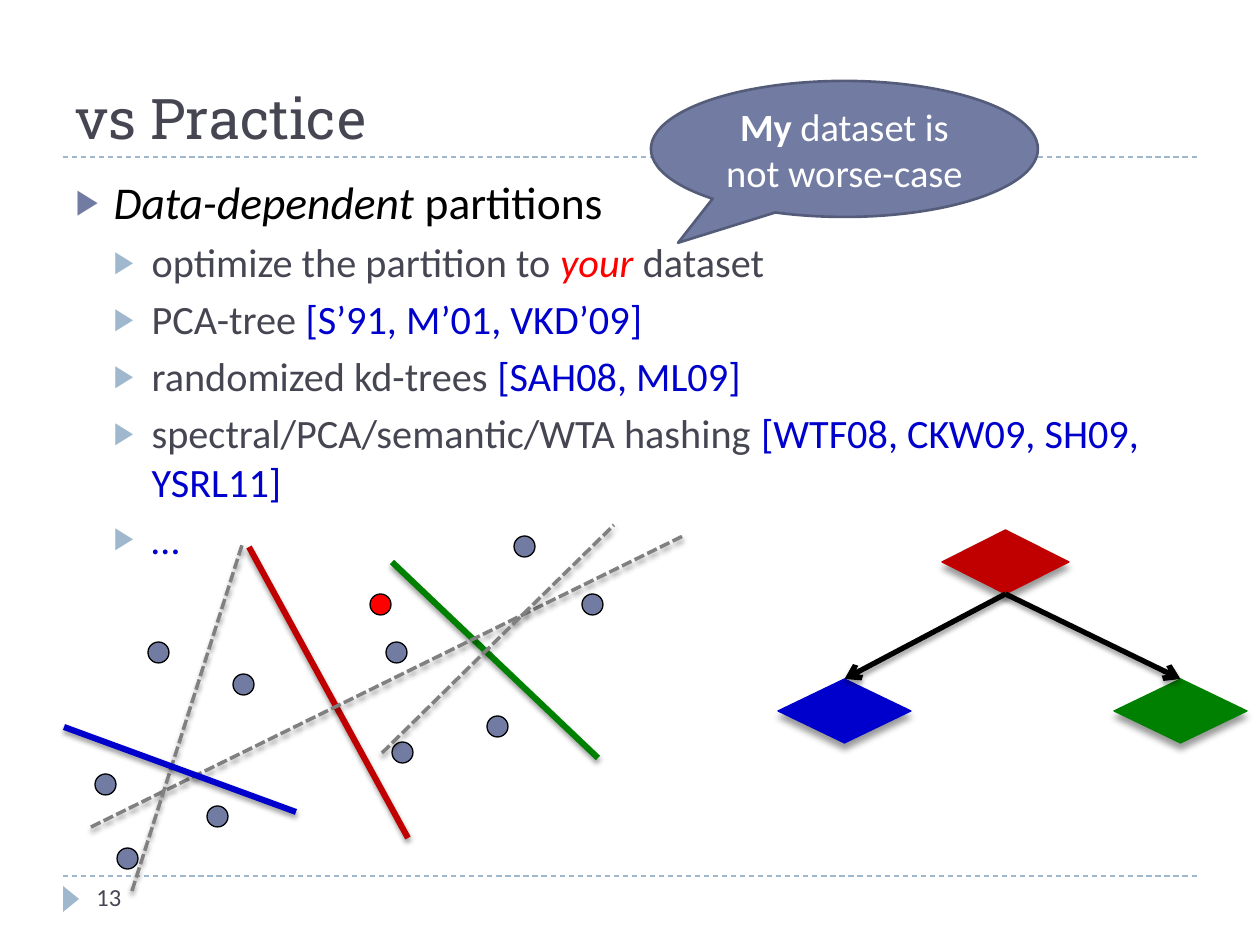
"""Build the slide on data-dependent partitions in practice."""
from lxml.etree import SubElement
from pptx import Presentation
from pptx.dml.color import RGBColor
from pptx.enum.dml import MSO_LINE
from pptx.enum.shapes import MSO_CONNECTOR, MSO_SHAPE
from pptx.enum.text import MSO_ANCHOR, MSO_AUTO_SIZE, PP_ALIGN
from pptx.oxml.ns import qn
from pptx.util import Pt

SCALE = 914400 / 126
BLACK = RGBColor(0x00, 0x00, 0x00)
WHITE = RGBColor(0xFF, 0xFF, 0xFF)
SLATE = RGBColor(0x46, 0x46, 0x53)
INDIGO = RGBColor(0x72, 0x7C, 0xA3)
DARK_INDIGO = RGBColor(0x54, 0x5C, 0x79)
PALE_BLUE = RGBColor(0x9F, 0xB8, 0xCD)
BRIGHT_RED = RGBColor(0xFF, 0x00, 0x00)
RED = RGBColor(0xC0, 0x00, 0x00)
GREEN = RGBColor(0x00, 0x80, 0x00)
BLUE = RGBColor(0x00, 0x00, 0xCC)
GRAY = RGBColor(0x80, 0x80, 0x80)


def px(*lengths):
    return [round(length * SCALE) for length in lengths]


def set_shadow(part, blur=0, distance=0):
    effects = SubElement(part.element.spPr, qn("a:effectLst"))
    if blur:
        outer = SubElement(effects, qn("a:outerShdw"), blurRad=str(Pt(blur)),
                           dist=str(Pt(distance)), dir="5400000", rotWithShape="0")
        tint = SubElement(outer, qn("a:srgbClr"), val=str(BLACK))
        SubElement(tint, qn("a:alpha"), val="40000")


presentation = Presentation()
presentation.slide_width, presentation.slide_height = px(1260, 945)
slide = presentation.slides.add_slide(presentation.slide_layouts[1])
shapes = slide.shapes

for rule_y in (876, 157):
    rule = shapes.add_connector(MSO_CONNECTOR.STRAIGHT, *px(63, rule_y, 1197, rule_y))
    rule.line.color.rgb = PALE_BLUE
    rule.line.width = Pt(0.75)
    rule.line.dash_style = MSO_LINE.DASH
    set_shadow(rule)

page_marker = shapes.add_shape(MSO_SHAPE.ISOSCELES_TRIANGLE, *px(58, 891, 26, 16))
page_marker.rotation = 90
page_marker.fill.solid()
page_marker.fill.fore_color.rgb = PALE_BLUE
page_marker.line.fill.background()
page_marker.shadow.inherit = False

title = shapes.title
title.left, title.top, title.width, title.height = px(63, 21, 1134, 136)
title.text_frame.text = "vs Practice"
title.text_frame.vertical_anchor = MSO_ANCHOR.BOTTOM
title.text_frame.auto_size = MSO_AUTO_SIZE.NONE
heading = title.text_frame.paragraphs[0]
heading.alignment = PP_ALIGN.LEFT
heading.runs[0].font.name = "Roboto Slab"
heading.runs[0].font.size = Pt(32)
heading.runs[0].font.color.rgb = SLATE

points = [
    (0, [("Data-dependent ", BLACK, True), ("partitions", BLACK, False)]),
    (1, [("optimize the partition to ", SLATE, False), ("your ", BRIGHT_RED, True),
         ("dataset", SLATE, False)]),
    (1, [("PCA-tree ", SLATE, False), ("[S’91, M’01, VKD’09]", BLUE, False)]),
    (1, [("randomized kd-trees ", SLATE, False), ("[SAH08, ML09]", BLUE, False)]),
    (1, [("spectral/PCA/semantic/WTA hashing ", SLATE, False),
         ("[WTF08, CKW09, SH09, YSRL11]", BLUE, False)]),
    (1, [("…", BLUE, False)]),
]
body = slide.placeholders[1]
body.left, body.top, body.width, body.height = px(63, 168, 1134, 680)
body.text_frame.auto_size = MSO_AUTO_SIZE.NONE
for index, (level, pieces) in enumerate(points):
    point = body.text_frame.add_paragraph() if index else body.text_frame.paragraphs[0]
    point.level = level
    point.space_before = Pt(5 if index else 0)
    properties = point._p.get_or_add_pPr()
    indent = px(38)[0]
    properties.set("marL", str(indent * (level + 1)))
    properties.set("indent", str(-indent))
    bullet_color = SubElement(properties, qn("a:buClr"))
    SubElement(bullet_color, qn("a:srgbClr"), val=str((INDIGO, PALE_BLUE)[level]))
    SubElement(properties, qn("a:buSzPct"), val="76000")
    SubElement(properties, qn("a:buChar"), char="▶")
    for words, color, italic in pieces:
        piece = point.add_run()
        piece.text = words
        piece.font.name = "Calibri"
        piece.font.size = Pt((26, 23)[level])
        piece.font.italic = italic
        piece.font.color.rgb = color

page_number = shapes.add_textbox(*px(84, 876, 273, 50))
page_number.text_frame.word_wrap = True
page_number.text_frame.text = "13"
digits = page_number.text_frame.paragraphs[0].runs[0]
digits.font.name = "Calibri"
digits.font.size = Pt(14)
digits.font.color.rgb = SLATE

data_points = [(148, 642), (233, 674), (514, 536), (207, 806), (95, 774), (582, 594),
               (386, 642), (117, 848), (392, 742), (487, 716)]
query_point = (370, 594)
for x, y in data_points + [query_point]:
    dot = shapes.add_shape(MSO_SHAPE.OVAL, *px(x, y, 21, 21))
    dot.fill.solid()
    dot.fill.fore_color.rgb = BRIGHT_RED if (x, y) == query_point else INDIGO
    dot.line.color.rgb = BLACK
    dot.line.width = Pt(0.75)
    dot.shadow.inherit = False

partitions = [
    ((249, 547, 408, 838), RED),
    ((392, 562, 598, 758), GREEN),
    ((91, 827, 683, 536), GRAY),
    ((132, 891, 243, 542), GRAY),
    ((382, 753, 614, 525), GRAY),
    ((64, 727, 296, 812), BLUE),
]
for ends, color in partitions:
    partition = shapes.add_connector(MSO_CONNECTOR.STRAIGHT, *px(*ends))
    partition.line.color.rgb = color
    partition.line.width = Pt(2 if color == GRAY else 3.5)
    if color == GRAY:
        partition.line.dash_style = MSO_LINE.SQUARE_DOT
    set_shadow(partition, 3, 2)

tree_nodes = []
for bounds, color in [((942, 530, 127, 64), RED), ((778, 679, 133, 64), BLUE),
                      ((1114, 679, 133, 64), GREEN)]:
    node = shapes.add_shape(MSO_SHAPE.DIAMOND, *px(*bounds))
    node.fill.solid()
    node.fill.fore_color.rgb = color
    node.line.color.rgb = color
    node.line.width = Pt(0.75)
    set_shadow(node, 4, 3.4)
    tree_nodes.append(node)

root, left_child, right_child = tree_nodes
for child in (right_child, left_child):
    branch = shapes.add_connector(MSO_CONNECTOR.STRAIGHT, 0, 0, 0, 0)
    branch.begin_connect(root, 2)
    branch.end_connect(child, 0)
    branch.line.color.rgb = BLACK
    branch.line.width = Pt(3)
    SubElement(branch.line._get_or_add_ln(), qn("a:tailEnd"), type="arrow")
    set_shadow(branch, 3, 2)

callout = shapes.add_shape(MSO_SHAPE.OVAL_CALLOUT, *px(651, 81, 387, 136))
callout.adjustments[0] = -0.43
callout.adjustments[1] = 0.69
callout.fill.solid()
callout.fill.fore_color.rgb = INDIGO
callout.line.color.rgb = DARK_INDIGO
callout.line.width = Pt(1.5)
callout.shadow.inherit = False
callout.text_frame.word_wrap = True
callout.text_frame.vertical_anchor = MSO_ANCHOR.MIDDLE
remark = callout.text_frame.paragraphs[0]
remark.alignment = PP_ALIGN.CENTER
for words, bold in [("My", True), (" dataset is not worse-case", False)]:
    piece = remark.add_run()
    piece.text = words
    piece.font.name = "Calibri"
    piece.font.size = Pt(22)
    piece.font.bold = bold
    piece.font.color.rgb = WHITE

presentation.save("out.pptx")
